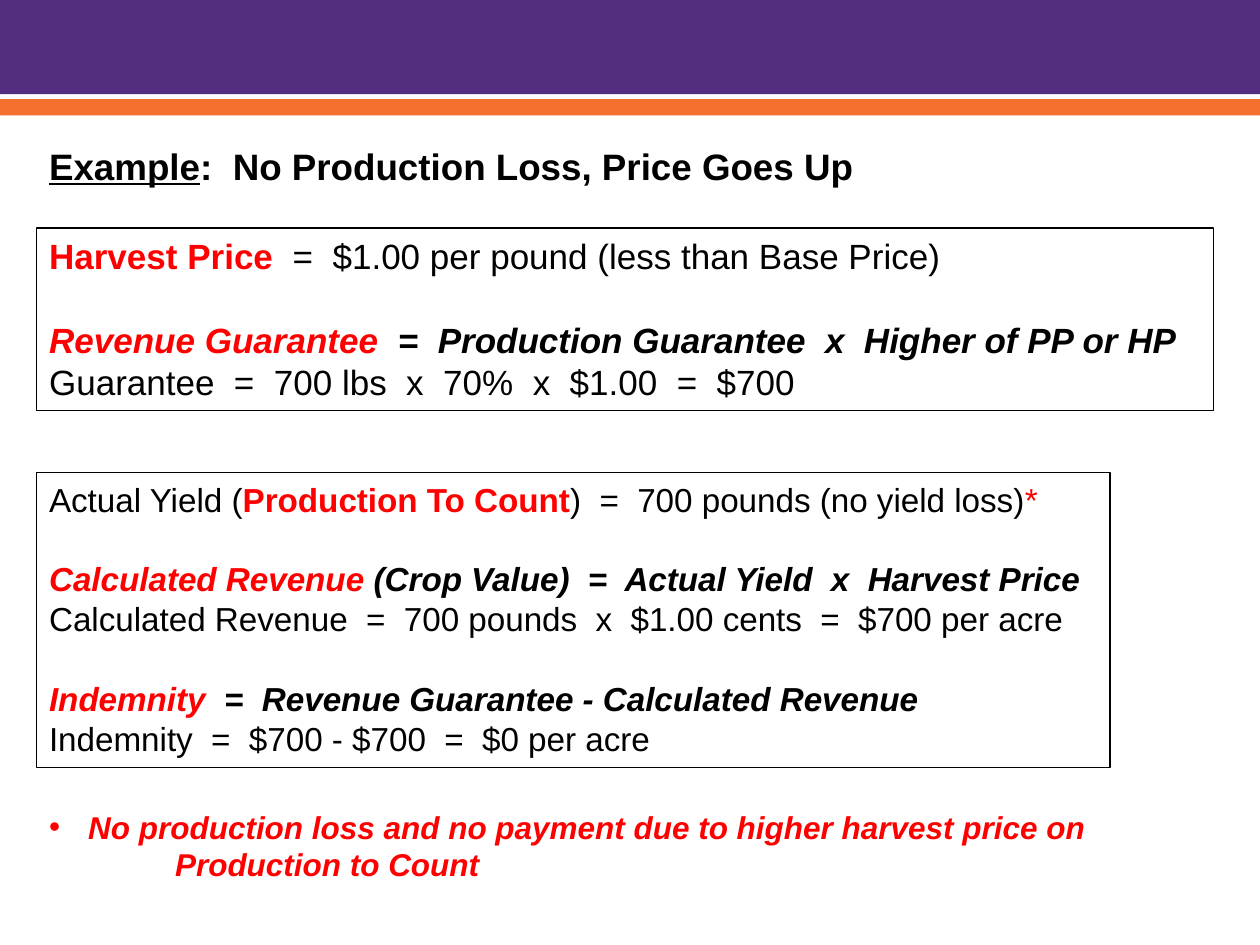
from lxml import etree
from pptx import Presentation
from pptx import util as u
from pptx.dml import color
from pptx.enum import shapes, text
from pptx.oxml import ns

COLORS = {"purple": "522D80", "orange": "F4702F", "black": "000000", "red": "FF0000"}
STYLES = {
    "plain": ("black", False, False),
    "star": ("red", False, False),
    "strong": ("black", True, False),
    "term": ("red", True, False),
    "formula": ("black", True, True),
    "formula_term": ("red", True, True),
}
LEFT = 0.74


def rgb(name):
    return color.RGBColor.from_string(COLORS[name])


def add_rect(slide, box):
    rect = slide.shapes.add_shape(shapes.MSO_SHAPE.RECTANGLE, *map(u.Cm, box))
    rect.shadow.inherit = False
    return rect


def add_band(slide, box, fill):
    band = add_rect(slide, box)
    band.fill.solid()
    band.fill.fore_color.rgb = rgb(fill)
    band.line.fill.background()


def prepare_frame(frame):
    frame.word_wrap = True
    frame.vertical_anchor = text.MSO_ANCHOR.TOP
    return frame


def write_line(paragraph, pieces, size):
    paragraph.alignment = text.PP_ALIGN.LEFT
    for wording, style in pieces:
        run = paragraph.add_run()
        run.text = wording
        ink, bold, italic = STYLES[style]
        run.font.name = "Arial"
        run.font.size = u.Pt(size)
        run.font.color.rgb = rgb(ink)
        run.font.bold = bold
        run.font.italic = italic


def add_heading(slide, box):
    heading = slide.shapes.add_textbox(*map(u.Cm, box))
    line = prepare_frame(heading.text_frame).paragraphs[0]
    write_line(line, [("Example", "strong"),
                      (":  No Production Loss, Price Goes Up", "strong")], 21)
    line.runs[0].font.underline = True


def add_calculation(slide, box, groups, size):
    panel = add_rect(slide, box)
    panel.fill.background()
    panel.line.color.rgb = rgb("black")
    panel.line.width = u.Pt(0.75)
    frame = prepare_frame(panel.text_frame)
    pitch = u.Pt(size * 1.2)
    for group_no, group in enumerate(groups):
        for line_no, pieces in enumerate(group):
            first = group_no == line_no == 0
            line = frame.paragraphs[0] if first else frame.add_paragraph()
            line.line_spacing = pitch
            if group_no and not line_no:
                line.space_before = pitch
            write_line(line, pieces, size)


def set_indent(paragraph, left, hanging=0):
    properties = paragraph._p.get_or_add_pPr()
    properties.set("marL", str(u.Cm(left)))
    properties.set("indent", str(-u.Cm(hanging)))
    return properties


def add_conclusion(slide, box):
    conclusion = slide.shapes.add_textbox(*map(u.Cm, box))
    frame = prepare_frame(conclusion.text_frame)
    finding, continuation = frame.paragraphs[0], frame.add_paragraph()
    finding.line_spacing = continuation.line_spacing = u.Pt(21.2)
    properties = set_indent(finding, 0.79, 0.79)
    etree.SubElement(properties, ns.qn("a:buFont")).set("typeface", "Arial")
    etree.SubElement(properties, ns.qn("a:buChar")).set("char", "•")
    set_indent(continuation, 2.54)
    write_line(finding, [("No production loss and no payment due to higher harvest price on",
                          "formula_term")], 18)
    write_line(continuation, [("Production to Count", "formula_term")], 18)


GUARANTEE = [
    [[("Harvest Price", "term"),
      ("  =  $1.00 per pound (less than Base Price)", "plain")]],
    [[("Revenue Guarantee  ", "formula_term"),
      ("=  Production Guarantee  x  Higher of PP or HP", "formula")],
     [("Guarantee  =  700 lbs  x  70%  x  $1.00  =  $700", "plain")]],
]
INDEMNITY = [
    [[("Actual Yield (", "plain"), ("Production To Count", "term"),
      (")  =  700 pounds (no yield loss)", "plain"), ("*", "star")]],
    [[("Calculated Revenue", "formula_term"),
      (" (Crop Value)  =  Actual Yield  x  Harvest Price", "formula")],
     [("Calculated Revenue  =  700 pounds  x  $1.00 cents  =  $700 per acre", "plain")]],
    [[("Indemnity", "formula_term"),
      ("  =  Revenue Guarantee - Calculated Revenue", "formula")],
     [("Indemnity  =  $700 - $700  =  $0 per acre", "plain")]],
]


def main():
    deck = Presentation()
    deck.slide_width, deck.slide_height = u.Cm(25.4), u.Cm(19.05)
    slide = deck.slides.add_slide(deck.slide_layouts[6])
    add_band(slide, (0, 0, 25.4, 1.9), "purple")
    add_band(slide, (0, 2, 25.4, 0.33), "orange")
    add_heading(slide, (LEFT, 2.77, 16.89, 1.14))
    add_calculation(slide, (LEFT, 4.6, 23.72, 3.68), GUARANTEE, 20)
    add_calculation(slide, (LEFT, 9.53, 21.64, 5.94), INDEMNITY, 19)
    add_conclusion(slide, (LEFT, 16.18, 21.79, 1.8))
    deck.save("out.pptx")


if __name__ == "__main__":
    main()
